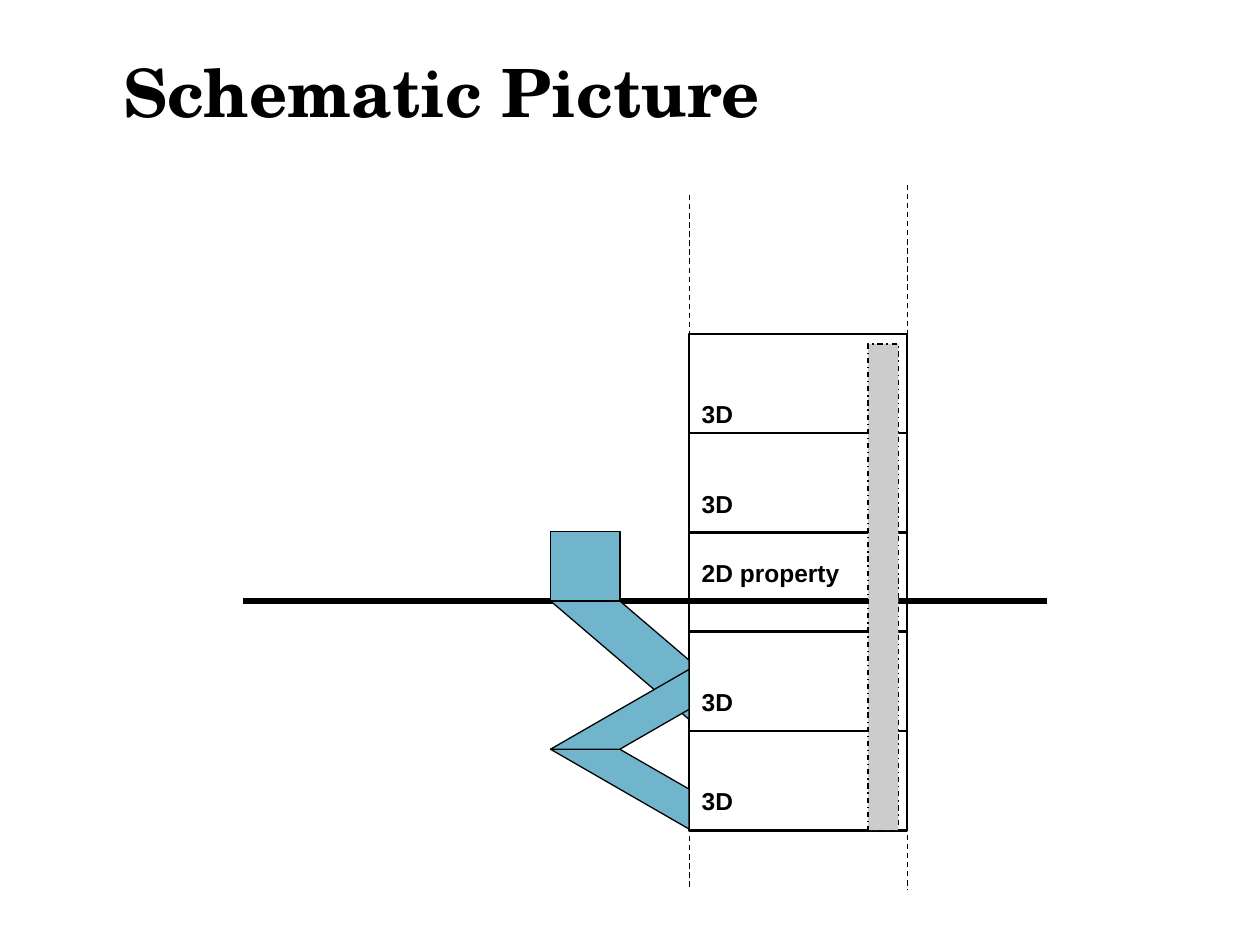
from lxml import etree
from pptx import Presentation
from pptx.dml.color import RGBColor
from pptx.enum.dml import MSO_LINE_DASH_STYLE as Dash
from pptx.enum.shapes import MSO_CONNECTOR, MSO_SHAPE as Shape
from pptx.enum.text import MSO_ANCHOR, MSO_AUTO_SIZE, PP_ALIGN
from pptx.oxml.ns import qn
from pptx.util import Inches, Pt

BLACK = RGBColor(0x00, 0x00, 0x00)
BLUE = RGBColor(0x71, 0xB5, 0xCC)
GREY = RGBColor(0xCC, 0xCC, 0xCC)

FLOORS = 5
LABELS = [("3D", 0.47), ("3D", 1.18), ("2D property", 1.73),
          ("3D", 2.75), ("3D", 3.54)]


def write(frame, text, size=14, font="Arial", space=None):
    para = frame.paragraphs[0]
    para.alignment = PP_ALIGN.LEFT
    if space:
        para.line_spacing = Pt(space)
    run = para.add_run()
    run.text = text
    run.font.size = Pt(size)
    run.font.name = font
    run.font.bold = True
    run.font.color.rgb = BLACK


def stroke(line, width, dash=None):
    line.color.rgb = BLACK
    line.width = Pt(width)
    if dash:
        line.dash_style = dash


def add_line(slide, x1, y1, x2, y2, width, dash=None):
    line = slide.shapes.add_connector(
        MSO_CONNECTOR.STRAIGHT, *map(Inches, (x1, y1, x2, y2)))
    stroke(line.line, width, dash)
    etree.SubElement(line.element.spPr, qn("a:effectLst"))


def add_part(slide, kind, box, fill=None, width=0.75, dash=None, flips=()):
    part = slide.shapes.add_shape(kind, *map(Inches, box))
    part.shadow.inherit = False
    if fill is None:
        part.fill.background()
    else:
        part.fill.solid()
        part.fill.fore_color.rgb = fill
    stroke(part.line, width, dash)
    for flip in flips:
        part.element.spPr.xfrm.set(flip, "1")


def add_title(slide, left, top, width, height):
    title = slide.shapes.title
    title.left, title.top = Inches(left), Inches(top)
    title.width, title.height = Inches(width), Inches(height)
    frame = title.text_frame
    frame.margin_left = frame.margin_right = 0
    frame.margin_top = frame.margin_bottom = 0
    frame.vertical_anchor = MSO_ANCHOR.BOTTOM
    write(frame, "Schematic Picture", size=38, font="TeX Gyre Schola", space=38)


def add_floors(slide, left, top, width, height):
    step = height / FLOORS
    for i in range(FLOORS):
        add_part(slide, Shape.RECTANGLE, (left, top + i * step, width, step),
                 width=1.5)
    for x, start in ((left, 1.55), (left + width, 1.47)):
        add_line(slide, x, start, x, 7.06, 0.75, Dash.DASH)


def add_ramps(slide, left, top, width, height):
    """Place the entrance and three ramps; the box starts at ground level."""
    side = width / 2
    low = height * 0.35
    add_part(slide, Shape.DIAGONAL_STRIPE, (left, top, width, 0.94),
             BLUE, flips=["flipH"])
    add_part(slide, Shape.RECTANGLE, (left, top - side, side, side), BLUE)
    for i, flips in ((2, ["flipH"]), (1, ["flipH", "flipV"])):
        y = top + height - (3 - i) * low
        add_part(slide, Shape.DIAGONAL_STRIPE, (left, y, width, low),
                 BLUE, flips=flips)


def add_labels(slide, left, top, width):
    for text, drop in LABELS:
        box = slide.shapes.add_textbox(
            *map(Inches, (left, top + drop, width, 0.34)))
        frame = box.text_frame
        frame.word_wrap = True
        frame.auto_size = MSO_AUTO_SIZE.SHAPE_TO_FIT_TEXT
        write(frame, text)


def main():
    deck = Presentation()
    deck.slide_width, deck.slide_height = Inches(10), Inches(7.5)
    slide = deck.slides.add_slide(deck.slide_layouts[5])
    add_title(slide, 0.98, 0.21, 8.08, 0.83)
    add_line(slide, 1.93, 4.77, 8.31, 4.77, 3)
    add_floors(slide, 5.47, 2.65, 1.73, 3.94)
    add_ramps(slide, 4.37, 4.77, 1.1, 1.81)
    add_part(slide, Shape.RECTANGLE, (6.89, 2.73, 0.24, 3.86), GREY,
             dash=Dash.DASH_DOT)
    add_labels(slide, 5.47, 2.65, 1.42)
    deck.save("out.pptx")


if __name__ == "__main__":
    main()
